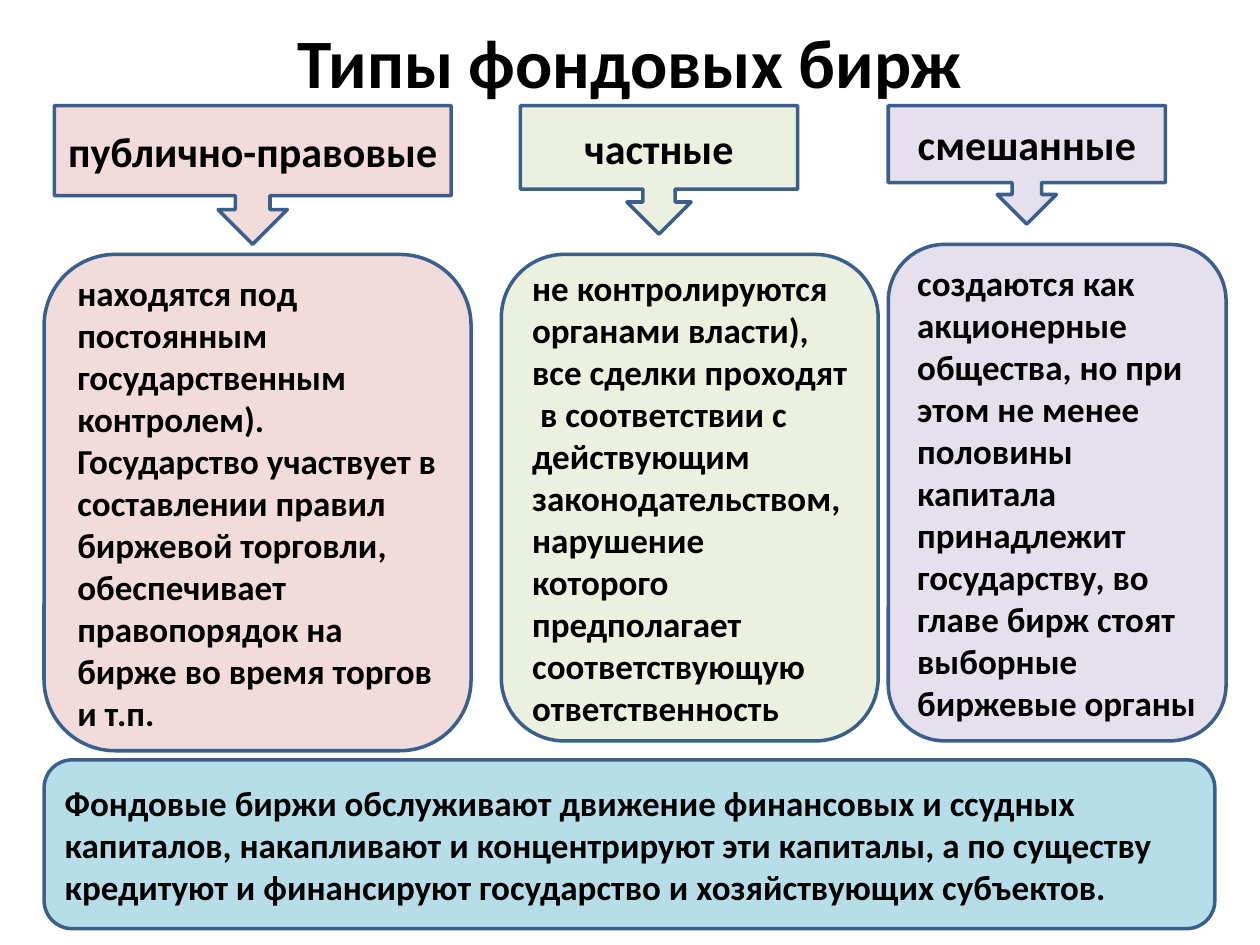
from dataclasses import dataclass

from pptx import Presentation
from pptx.dml.color import RGBColor
from pptx.enum import shapes, text
from pptx.util import Pt


@dataclass(frozen=True)
class Theme:
    font: str = "Calibri"
    ink: str = "000000"
    outline: str = "3A5F8C"
    pink: str = "F2DCDB"
    green: str = "EBF1DE"
    lilac: str = "E6E0EC"
    blue: str = "B7DEE8"
    title_size: float = 39.6
    heading_size: float = 24
    body_size: float = 20


THEME = Theme()
HEADING_TOP = 60.4

# heading, its left/width/height, description lines, their left/top/width/height, fill
EXCHANGE_TYPES = [
    ("публично-правовые", (31, 226.8, 79.2),
     ["находятся под постоянным государственным контролем). Государство участвует "
      "в составлении правил биржевой торговли, обеспечивает правопорядок на бирже "
      "во время торгов и т.п."],
     (25.2, 145.4, 244, 283.6), THEME.pink),
    ("частные", (297.4, 158.4, 73.4),
     ["не контролируются органами власти), все сделки проходят",
      " в соответствии с действующим законодательством, нарушение которого "
      "предполагает соответствующую ответственность"],
     (286.5, 145.4, 215.3, 278), THEME.green),
    ("смешанные", (507.6, 158.4, 67.7),
     ["создаются как акционерные общества, но при",
      "этом не менее половины капитала принадлежит государству, во главе бирж "
      "стоят выборные биржевые органы"],
     (507.6, 139.7, 193, 283.7), THEME.lilac),
]
SUMMARY = ("Фондовые биржи обслуживают движение финансовых и ссудных капиталов, "
           "накапливают и концентрируют эти капиталы, а по существу кредитуют и "
           "финансируют государство и хозяйствующих субъектов.")


def write(frame, lines, size, alignment):
    """Fill a text frame with one bold paragraph, broken between the lines."""
    frame.word_wrap = True
    frame.auto_size = text.MSO_AUTO_SIZE.NONE
    frame.vertical_anchor = text.MSO_ANCHOR.MIDDLE
    paragraph = frame.paragraphs[0]
    paragraph.alignment = alignment
    for index, line in enumerate(lines):
        if index:
            paragraph.add_line_break()
        run = paragraph.add_run()
        run.text = line
        run.font.name = THEME.font
        run.font.size = Pt(size)
        run.font.bold = True
        run.font.color.rgb = RGBColor.from_string(THEME.ink)


def add_box(slide, preset, box, fill):
    shape = slide.shapes.add_shape(preset, *map(Pt, box))
    shape.shadow.inherit = False
    shape.fill.solid()
    shape.fill.fore_color.rgb = RGBColor.from_string(fill)
    shape.line.color.rgb = RGBColor.from_string(THEME.outline)
    shape.line.width = Pt(2)
    return shape


def add_heading(slide, heading, box, fill):
    shape = add_box(slide, shapes.MSO_SHAPE.DOWN_ARROW_CALLOUT, box, fill)
    write(shape.text_frame, [heading], THEME.heading_size, text.PP_ALIGN.CENTER)


def add_card(slide, lines, box, fill):
    shape = add_box(slide, shapes.MSO_SHAPE.ROUNDED_RECTANGLE, box, fill)
    write(shape.text_frame, lines, THEME.body_size, text.PP_ALIGN.LEFT)


def set_title(slide, words):
    title = slide.shapes.title
    title.left, title.top, title.width, title.height = map(Pt, (36, 15.1, 648, 39.6))
    write(title.text_frame, [words], THEME.title_size, text.PP_ALIGN.CENTER)


def main():
    presentation = Presentation()
    presentation.slide_width, presentation.slide_height = Pt(720), Pt(540)
    slide = presentation.slides.add_slide(presentation.slide_layouts[5])

    set_title(slide, "Типы фондовых бирж")
    for heading, (left, width, height), _, _, fill in EXCHANGE_TYPES:
        add_heading(slide, heading, (left, HEADING_TOP, width, height), fill)
    for _, _, lines, box, fill in EXCHANGE_TYPES:
        add_card(slide, lines, box, fill)
    add_card(slide, [SUMMARY], (25.2, 434.2, 669, 96.5), THEME.blue)

    presentation.save("out.pptx")


if __name__ == "__main__":
    main()
